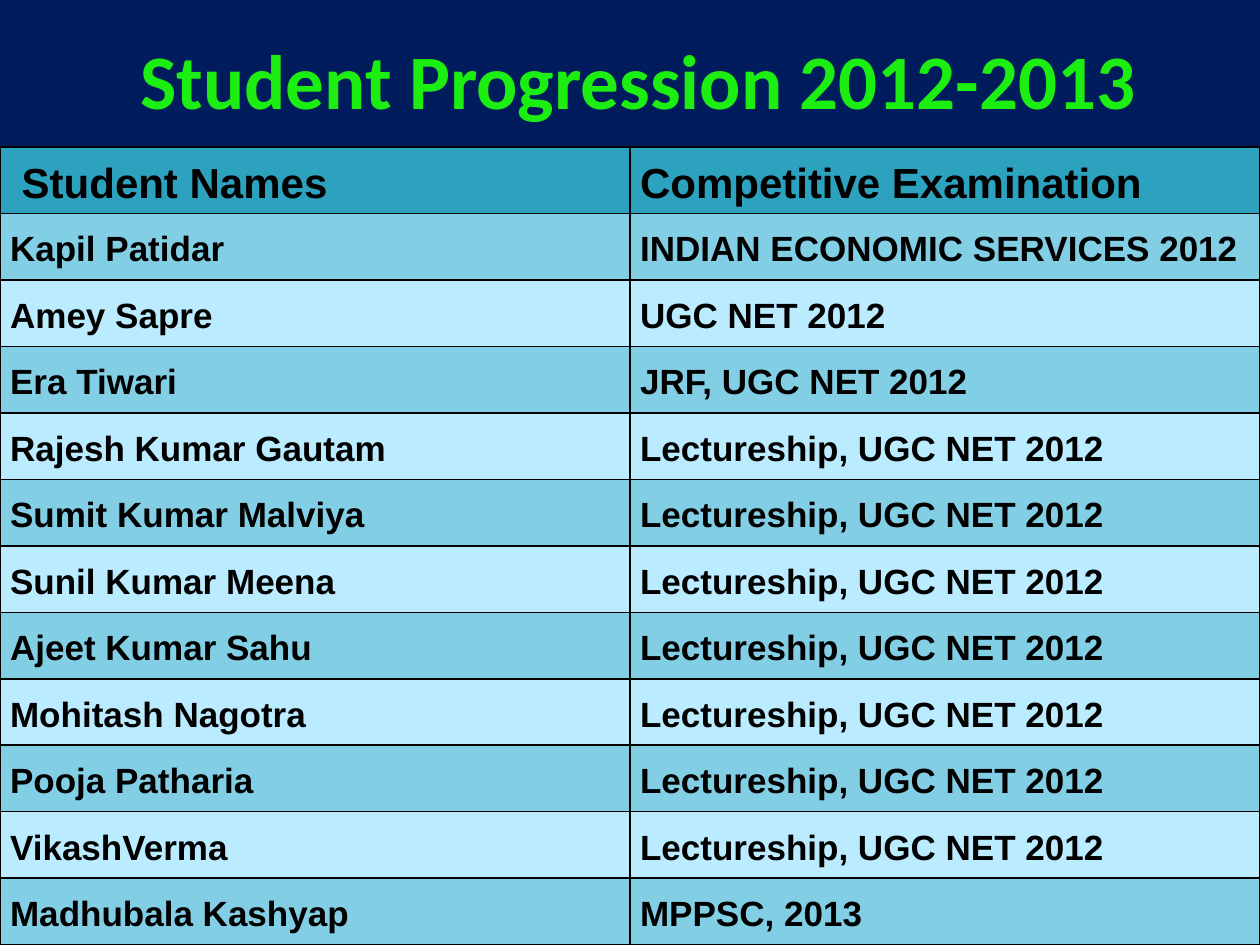
import pptx
import pptx.dml.color
import pptx.enum.text
import pptx.oxml.ns
import pptx.util
from lxml import etree

Pt = pptx.util.Pt
RGBColor = pptx.dml.color.RGBColor
PP_ALIGN = pptx.enum.text.PP_ALIGN
MSO_ANCHOR = pptx.enum.text.MSO_ANCHOR

NAVY = RGBColor(0x00, 0x1C, 0x5D)
GREEN = RGBColor(0x1C, 0xEE, 0x12)
BLACK = RGBColor(0x00, 0x00, 0x00)
TEAL = RGBColor(0x2D, 0xA2, 0xBF)
BAND = RGBColor(0x82, 0xCE, 0xE4)
PALE = RGBColor(0xBB, 0xEB, 0xFF)

WIDTH, HEIGHT = 720, 540
TABLE_TOP, ROW_HEIGHT = 84, 38
MARGIN, HEADER_INDENT = 5.76, 6.67

LECTURESHIP = "Lectureship, UGC NET 2012"
ROWS = [
    ("Student Names", "Competitive Examination"),
    ("Kapil Patidar", "INDIAN ECONOMIC SERVICES 2012"),
    ("Amey Sapre", "UGC NET 2012"),
    ("Era Tiwari", "JRF, UGC NET 2012"),
    ("Rajesh Kumar Gautam", LECTURESHIP),
    ("Sumit Kumar Malviya", LECTURESHIP),
    ("Sunil Kumar Meena", LECTURESHIP),
    ("Ajeet Kumar Sahu", LECTURESHIP),
    ("Mohitash Nagotra", LECTURESHIP),
    ("Pooja Patharia", LECTURESHIP),
    ("VikashVerma", LECTURESHIP),
    ("Madhubala Kashyap", "MPPSC, 2013"),
]


def write_text(frame, text, *, size, font="Arial", color=BLACK,
               align=PP_ALIGN.LEFT, line_spacing=1.0):
    para = frame.paragraphs[0]
    para.alignment = align
    para.line_spacing = line_spacing
    span = para.add_run()
    span.text = text
    span.font.name = font
    span.font.size = Pt(size)
    span.font.bold = True
    span.font.color.rgb = color


def add_borders(cell, color=BLACK, width=1):
    properties = cell._tc.get_or_add_tcPr()
    qn = pptx.oxml.ns.qn
    for side in ("a:lnL", "a:lnR", "a:lnT", "a:lnB"):
        line = etree.SubElement(properties, qn(side), w=str(Pt(width)))
        fill = etree.SubElement(line, qn("a:solidFill"))
        etree.SubElement(fill, qn("a:srgbClr"), val=str(color))


def format_cell(cell, text, *, size, fill, indent=0):
    add_borders(cell)
    cell.fill.solid()
    cell.fill.fore_color.rgb = fill
    cell.vertical_anchor = MSO_ANCHOR.MIDDLE
    cell.margin_left = Pt(MARGIN + indent)
    cell.margin_right = Pt(MARGIN)
    cell.margin_top = cell.margin_bottom = 0
    write_text(cell.text_frame, text, size=size, line_spacing=1.15)


def add_title(page, text):
    box = page.shapes.add_textbox(0, 0, Pt(WIDTH), Pt(90))
    frame = box.text_frame
    frame.word_wrap = True
    frame.vertical_anchor = MSO_ANCHOR.MIDDLE
    frame.margin_left = Pt(17)  # sets the title slightly right of centre
    write_text(frame, text, size=44, font="Calibri", color=GREEN,
               align=PP_ALIGN.CENTER)


def add_results_table(page, rows):
    table = page.shapes.add_table(
        len(rows), 2, 0, Pt(TABLE_TOP), Pt(WIDTH),
        Pt(ROW_HEIGHT * len(rows))).table
    for row_index, texts in enumerate(rows):
        table.rows[row_index].height = Pt(ROW_HEIGHT)
        is_header = row_index == 0
        fill = TEAL if is_header else BAND if row_index % 2 else PALE
        for column, text in enumerate(texts):
            indent = HEADER_INDENT if is_header and column == 0 else 0
            format_cell(table.cell(row_index, column), text, fill=fill,
                        size=24 if is_header else 20, indent=indent)


def main():
    deck = pptx.Presentation()
    deck.slide_width, deck.slide_height = Pt(WIDTH), Pt(HEIGHT)
    page = deck.slides.add_slide(deck.slide_layouts[6])

    # Background
    page.background.fill.solid()
    page.background.fill.fore_color.rgb = NAVY

    # Title and table of examination results
    add_title(page, "Student Progression 2012-2013")
    add_results_table(page, ROWS)

    deck.save("out.pptx")


if __name__ == "__main__":
    main()
